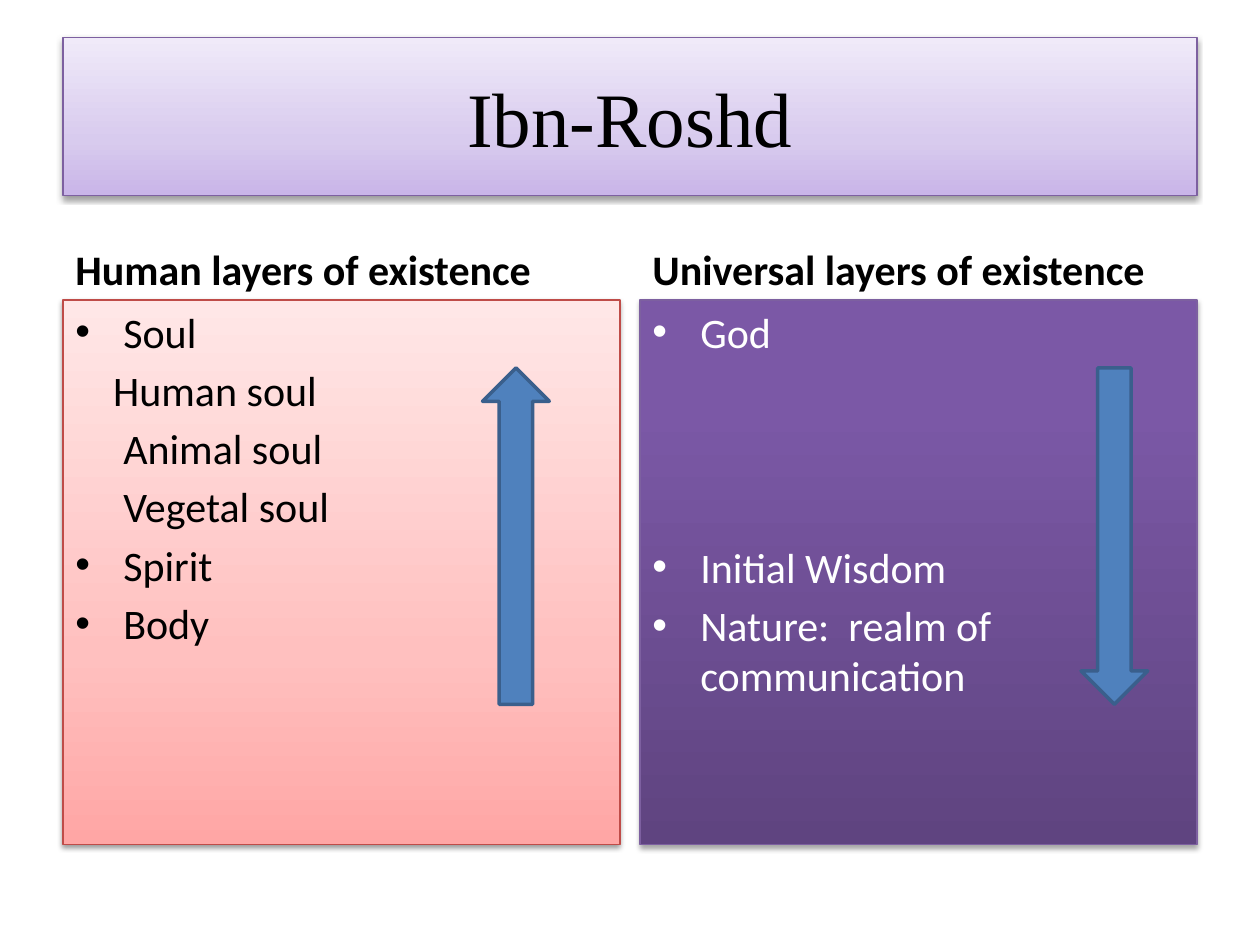
from pptx import Presentation
from pptx.dml.color import RGBColor as RGB
from pptx.enum.shapes import MSO_SHAPE as SHAPE
from pptx.enum.text import MSO_ANCHOR as ANCHOR, PP_ALIGN as ALIGN
from pptx.oxml import parse_xml as to_xml
from pptx.oxml.ns import nsdecls, qn
from pptx.util import Inches, Pt

HEX = {
    "black": "000000", "white": "FFFFFF",
    "violet": "7D60A0", "red": "BF4C48",
    "blue": "4F81BD", "navy": "3A5F8C",
}
# Gradient stops, from the bottom edge to the top
FADE = {
    "lilac": [(0, "C9B5E8"), (35, "D8CBEE"), (100, "F0EAF9")],
    "pink": [(0, "FFA6A5"), (35, "FFC0BF"), (100, "FFE7E7")],
    "plum": [(0, "5F4480"), (80, "7B58A6"), (100, "7C57A8")],
}
LEFT, RIGHT, WIDE = 0.5, 5.08, 4.42
HANG = 0.38
STEP = 4.5      # space between items, in points
DROP = 105.5    # space that lines Initial Wisdom up with Spirit

# Items: text, left indent, bullet, space before
HUMAN = [
    ("Soul", HANG, True, STEP),
    ("Human soul", 0.3, False, STEP),
    ("Animal soul", HANG, False, STEP),
    ("Vegetal soul", HANG, False, STEP),
    ("Spirit", HANG, True, STEP),
    ("Body", HANG, True, STEP),
]
WORLD = [
    ("God", HANG, True, STEP),
    ("Initial Wisdom", HANG, True, DROP),
    ("Nature:  realm of communication", HANG, True, STEP),
]


def color(name):
    return RGB.from_string(HEX[name])


def set_all(item, values):
    for key, value in values.items():
        setattr(item, key, value)


def add_form(slide, kind, box, edge, width):
    form = slide.shapes.add_shape(kind, *map(Inches, box))
    form.shadow.inherit = False
    form.line.color.rgb = color(edge)
    form.line.width = Pt(width)
    return form


def add_panel(slide, box, fade, edge, alpha, dist):
    """Rectangle with a vertical gradient and a soft shadow below."""
    panel = add_form(slide, SHAPE.RECTANGLE, box, edge, 0.75)
    panel.fill.gradient()
    panel.fill.gradient_angle = 90
    props = panel.element.spPr
    stops = props.find(qn("a:gradFill")).find(qn("a:gsLst"))
    for stop in list(stops):
        stops.remove(stop)
    for spot, tone in FADE[fade]:
        stops.append(to_xml(
            f'<a:gs {nsdecls("a")} pos="{spot * 1000}">'
            f'<a:srgbClr val="{tone}"/></a:gs>'))
    props.find(qn("a:effectLst")).append(to_xml(
        f'<a:outerShdw {nsdecls("a")} blurRad="{Pt(3.1)}" '
        f'dist="{Pt(dist)}" dir="5400000" rotWithShape="0">'
        f'<a:srgbClr val="{HEX["black"]}"><a:alpha val="{alpha * 1000}"/>'
        '</a:srgbClr></a:outerShdw>'))
    return panel


def add_line(para, text, tone, size=24, face="Calibri", bold=False):
    run = para.add_run()
    run.text = text
    set_all(run.font, {"size": Pt(size), "name": face, "bold": bold})
    run.font.color.rgb = color(tone)


def add_title(slide, text):
    panel = add_panel(slide, (LEFT, 0.3, 9, 1.25), "lilac", "violet", 38, 1.6)
    frame = panel.text_frame
    set_all(frame, {"word_wrap": True, "vertical_anchor": ANCHOR.MIDDLE})
    para = frame.paragraphs[0]
    para.alignment = ALIGN.CENTER
    add_line(para, text, "black", 44, "Times New Roman")


def add_head(slide, left, text):
    box = slide.shapes.add_textbox(*map(Inches, (left, 1.68, WIDE, 0.7)))
    frame = box.text_frame
    set_all(frame, {"word_wrap": True, "vertical_anchor": ANCHOR.BOTTOM})
    add_line(frame.paragraphs[0], text, "black", bold=True)


def add_list(panel, items, tone):
    frame = panel.text_frame
    set_all(frame, {"word_wrap": True, "vertical_anchor": ANCHOR.TOP})
    for i, (text, left, dot, gap) in enumerate(items):
        para = frame.add_paragraph() if i else frame.paragraphs[0]
        set_all(para, {"alignment": ALIGN.LEFT, "space_before": Pt(gap)})
        props = para._p.get_or_add_pPr()
        props.set("marL", str(Inches(left)))
        props.set("indent", str(-Inches(left) if dot else 0))
        if dot:
            props.append(to_xml(
                f'<a:buFont {nsdecls("a")} typeface="Arial"/>'))
            props.append(to_xml(f'<a:buChar {nsdecls("a")} char="•"/>'))
        add_line(para, text, tone)


def add_arrow(slide, kind, left):
    arrow = add_form(slide, kind, (left, 2.92, 0.53, 2.67), "navy", 2)
    arrow.fill.solid()
    arrow.fill.fore_color.rgb = color("blue")


def main():
    deck = Presentation()
    set_all(deck, {"slide_width": Inches(10), "slide_height": Inches(7.5)})
    slide = deck.slides.add_slide(deck.slide_layouts[6])

    add_title(slide, "Ibn-Roshd")

    # Two columns: heading, list panel, arrow
    columns = [
        (LEFT, "Human layers of existence", HUMAN, "black",
         ("pink", "red", 38, 1.6), SHAPE.UP_ARROW, 3.83),
        (RIGHT, "Universal layers of existence", WORLD, "white",
         ("plum", "violet", 35, 1.8), SHAPE.DOWN_ARROW, 8.58),
    ]
    for left, head, items, tone, look, kind, spot in columns:
        add_head(slide, left, head)
        panel = add_panel(slide, (left, 2.38, WIDE, 4.32), *look)
        add_list(panel, items, tone)
        add_arrow(slide, kind, spot)

    deck.save("out.pptx")


if __name__ == "__main__":
    main()
